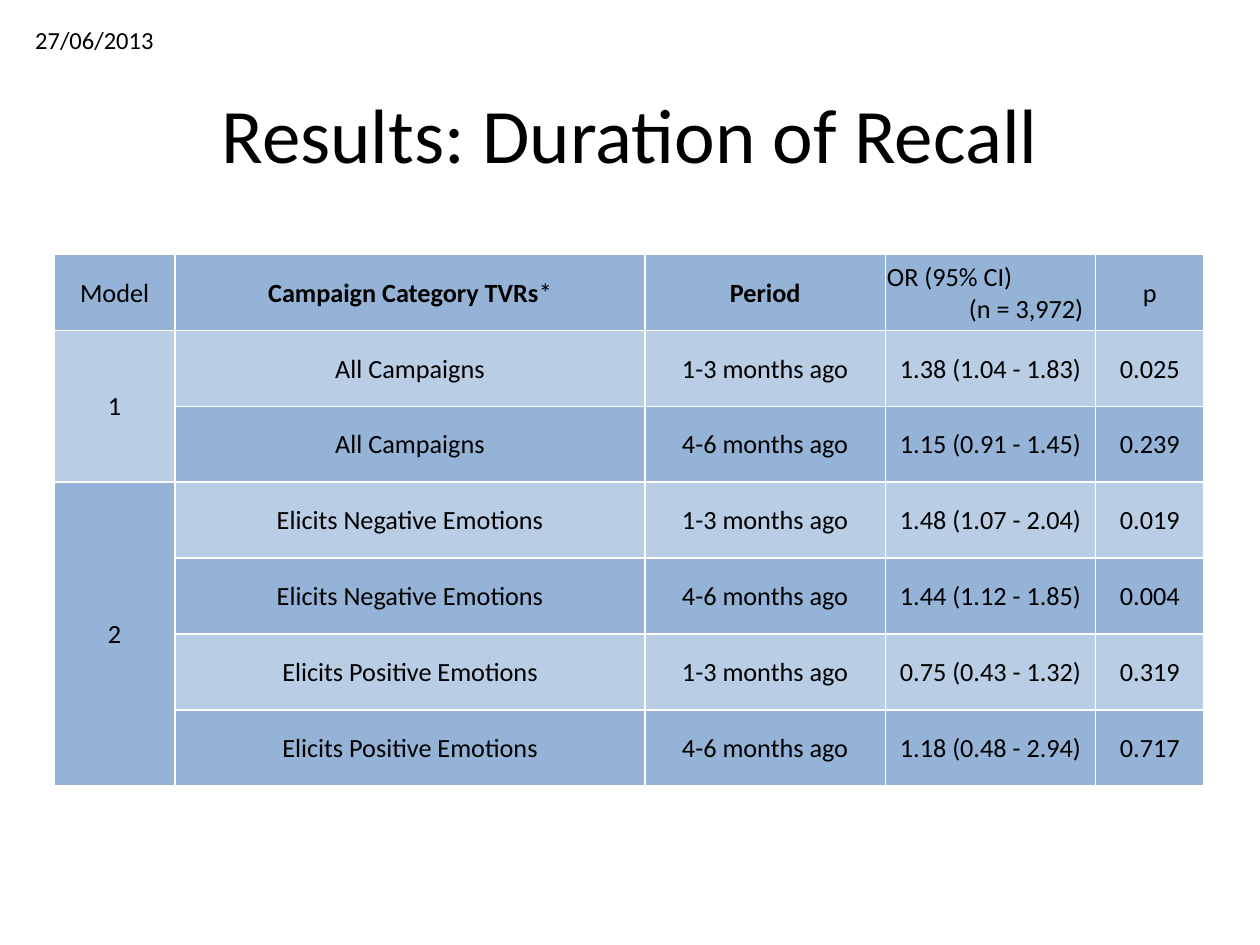
from lxml.etree import SubElement
from pptx import Presentation
from pptx.dml.color import RGBColor
from pptx.enum.text import MSO_ANCHOR, PP_ALIGN
from pptx.oxml.ns import qn
from pptx.util import Cm, Pt

BLACK = RGBColor(0x00, 0x00, 0x00)
BLUE = RGBColor(0x95, 0xB3, 0xD7)
PALE_BLUE = RGBColor(0xB9, 0xCD, 0xE5)
BORDER = RGBColor(0xFF, 0xFF, 0xFF)

DATE = "27/06/2013"
TITLE = "Results: Duration of Recall"
HEADER = ["Model", "Campaign Category TVRs", "Period", "OR (95% CI)", "p"]
SAMPLE = "(n = 3,972)"
ODDS_COLUMN = 3
BOLD_HEADINGS = ("Campaign Category TVRs", "Period")
RESULTS = [
    ("All Campaigns", "1-3 months ago", "1.38 (1.04 - 1.83)", "0.025"),
    ("All Campaigns", "4-6 months ago", "1.15 (0.91 - 1.45)", "0.239"),
    ("Elicits Negative Emotions", "1-3 months ago", "1.48 (1.07 - 2.04)", "0.019"),
    ("Elicits Negative Emotions", "4-6 months ago", "1.44 (1.12 - 1.85)", "0.004"),
    ("Elicits Positive Emotions", "1-3 months ago", "0.75 (0.43 - 1.32)", "0.319"),
    ("Elicits Positive Emotions", "4-6 months ago", "1.18 (0.48 - 2.94)", "0.717"),
]
# Model number, first row, last row, fill
MODELS = [("1", 1, 2, PALE_BLUE), ("2", 3, 6, BLUE)]
COLUMN_WIDTHS = [2.44, 9.47, 4.85, 4.24, 2.18]
ROW_HEIGHT = 1.53


def add_text(paragraph, text, size=15, bold=False, align=PP_ALIGN.CENTER):
    paragraph.alignment = align
    run = paragraph.add_run()
    run.text = text
    font = run.font
    font.name, font.size, font.bold = "Calibri", Pt(size), bold
    font.color.rgb = BLACK


def format_cell(cell, fill):
    cell.vertical_anchor = MSO_ANCHOR.MIDDLE
    cell.margin_left = cell.margin_right = cell.margin_top = Cm(0.03)
    cell.margin_bottom = 0
    properties = cell._tc.get_or_add_tcPr()
    for side in ("a:lnL", "a:lnR", "a:lnT", "a:lnB"):
        line = SubElement(properties, qn(side), w=str(Pt(1)))
        solid = SubElement(line, qn("a:solidFill"))
        SubElement(solid, qn("a:srgbClr"), val=str(BORDER))
    cell.fill.solid()
    cell.fill.fore_color.rgb = fill


def add_results_table(slide):
    row_count = len(RESULTS) + 1
    table = slide.shapes.add_table(
        row_count, len(HEADER), Cm(1.09), Cm(5.13),
        Cm(sum(COLUMN_WIDTHS)), Cm(ROW_HEIGHT * row_count)).table
    for column, width in zip(table.columns, COLUMN_WIDTHS):
        column.width = Cm(width)
    for index, row in enumerate(table.rows):
        row.height = Cm(ROW_HEIGHT)
        for cell in row.cells:
            format_cell(cell, PALE_BLUE if index % 2 else BLUE)

    for column, heading in enumerate(HEADER):
        add_text(table.cell(0, column).text_frame.paragraphs[0], heading,
                 bold=heading in BOLD_HEADINGS)
    add_text(table.cell(0, 1).text_frame.paragraphs[0], "*")
    odds = table.cell(0, ODDS_COLUMN)
    odds.margin_right = Cm(0.25)
    odds.text_frame.paragraphs[0].alignment = PP_ALIGN.LEFT
    add_text(odds.text_frame.add_paragraph(), SAMPLE, align=PP_ALIGN.RIGHT)

    for row, result in enumerate(RESULTS, start=1):
        for column, value in enumerate(result, start=1):
            add_text(table.cell(row, column).text_frame.paragraphs[0], value)
    for model, first, last, fill in MODELS:
        cell = table.cell(first, 0)
        cell.merge(table.cell(last, 0))
        cell.fill.fore_color.rgb = fill
        add_text(cell.text_frame.paragraphs[0], model)


def main():
    deck = Presentation()
    deck.slide_width, deck.slide_height = Cm(25.4), Cm(19.05)
    slide = deck.slides.add_slide(deck.slide_layouts[5])

    title = slide.shapes.title
    title.left, title.top, title.width, title.height = (
        Cm(1.27), Cm(1.09), Cm(22.86), Cm(3.18))
    title.text_frame.vertical_anchor = MSO_ANCHOR.MIDDLE
    add_text(title.text_frame.paragraphs[0], TITLE, size=44)

    date = slide.shapes.add_textbox(Cm(0.46), Cm(0.38), Cm(4.6), Cm(0.86))
    date.text_frame.word_wrap = True
    add_text(date.text_frame.paragraphs[0], DATE, size=14, align=PP_ALIGN.LEFT)

    add_results_table(slide)
    deck.save("out.pptx")


if __name__ == "__main__":
    main()
